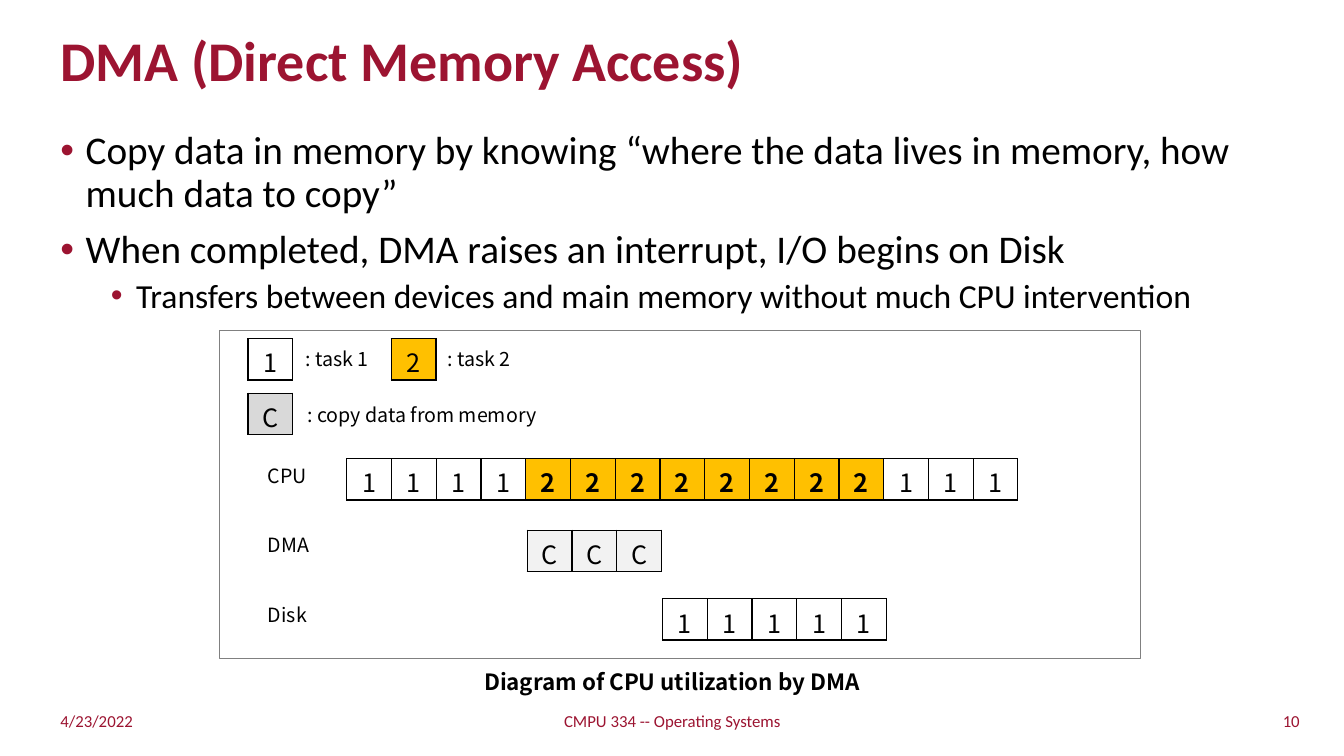
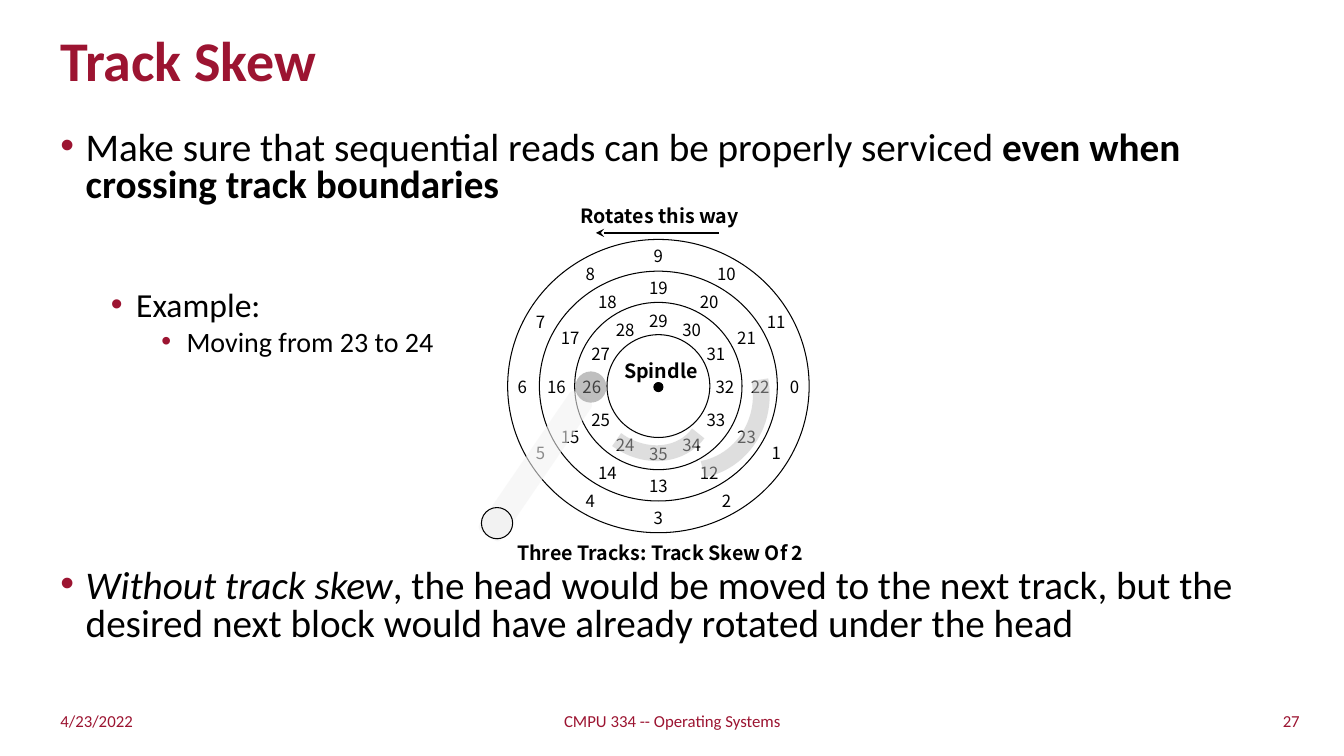
import math

import pptx
import pptx.dml.color
import pptx.enum.shapes
import pptx.enum.text
import pptx.oxml
import pptx.oxml.ns
import pptx.util

Inches = pptx.util.Inches
Pt = pptx.util.Pt
Align = pptx.enum.text.PP_ALIGN
Shape = pptx.enum.shapes.MSO_SHAPE
qn = pptx.oxml.ns.qn

COLOURS = {
    "maroon": "9C1431", "black": "000000", "amber": "FFC000",
    "frame": "808080", "arc": "BFBFBF", "pale": "F2F2F2", "silver": "D9D9D9",
}
TEXT_FONT = "Calibri"
DIAGRAM_FONT = "Noto Sans CJK KR"
CELL_WIDTH = 0.444
CELL_HEIGHT = 0.41


def colour(name):
    return pptx.dml.color.RGBColor.from_string(COLOURS[name])


def add_xml(parent, tag, **attributes):
    element = pptx.oxml.parse_xml(f'<a:{tag} {pptx.oxml.ns.nsdecls("a")}/>')
    for name, value in attributes.items():
        element.set(name, str(value))
    parent.append(element)
    return element


class Deck:
    def __init__(self):
        self.presentation = pptx.Presentation()
        self.presentation.slide_width = Inches(13.33)
        self.presentation.slide_height = Inches(7.5)
        self.slide = None

    def start_slide(self, title, number, bullets, line_spacing):
        layout = self.presentation.slide_layouts[1]
        self.slide = self.presentation.slides.add_slide(layout)
        self.title(title)
        self.body(bullets, line_spacing)
        self.footer("4/23/2022", 0.5, 3.76, Align.LEFT)
        self.footer("CMPU 334 -- Operating Systems", 4.42, 4.5, Align.CENTER)
        self.footer(str(number), 9.23, 3.76, Align.RIGHT)

    def place(self, shape, left, top, width, height):
        shape.left, shape.top = Inches(left), Inches(top)
        shape.width, shape.height = Inches(width), Inches(height)

    def style(self, run, size, font=DIAGRAM_FONT, tone="black", bold=False, italic=False):
        run.font.name = font
        run.font.size = Pt(size)
        run.font.bold = bold
        run.font.italic = italic
        run.font.color.rgb = colour(tone)

    def title(self, text):
        shape = self.slide.shapes.title
        self.place(shape, 0.5, 0.25, 11.45, 0.75)
        frame = shape.text_frame
        frame.text = text
        frame.auto_size = pptx.enum.text.MSO_AUTO_SIZE.NONE
        frame.vertical_anchor = pptx.enum.text.MSO_ANCHOR.MIDDLE
        paragraph = frame.paragraphs[0]
        paragraph.alignment = Align.LEFT
        paragraph.line_spacing = 0.9
        self.style(paragraph.runs[0], 40, TEXT_FONT, "maroon", bold=True)

    def body(self, bullets, line_spacing):
        shape = self.slide.placeholders[1]
        self.place(shape, 0.5, 1.25, 12.33, 5.45)
        frame = shape.text_frame
        frame.auto_size = pptx.enum.text.MSO_AUTO_SIZE.NONE
        for index, (level, space_before, pieces) in enumerate(bullets):
            paragraph = frame.add_paragraph() if index else frame.paragraphs[0]
            paragraph.level = level
            paragraph.line_spacing = line_spacing
            paragraph.space_before = Pt(space_before)
            self.bullet(paragraph, level)
            for text, emphasis in pieces:
                run = paragraph.add_run()
                run.text = text
                self.style(run, 28 - 4 * level, TEXT_FONT,
                           bold=emphasis == "bold", italic=emphasis == "italic")

    def bullet(self, paragraph, level):
        properties = paragraph._p.get_or_add_pPr()
        properties.set("marL", str(Inches(0.25 + 0.5 * level)))
        properties.set("indent", str(Inches(-0.25)))
        add_xml(add_xml(properties, "buClr"), "srgbClr", val=COLOURS["maroon"])
        add_xml(properties, "buFont", typeface="Arial")
        add_xml(properties, "buChar", char="•")

    def text(self, text, left, top, width, height=0.34, size=14, align=Align.LEFT,
             side_margin=0.1, **look):
        shape = self.slide.shapes.add_textbox(
            Inches(left), Inches(top), Inches(width), Inches(height))
        frame = shape.text_frame
        frame.text = text
        frame.word_wrap = True
        frame.margin_left = frame.margin_right = Inches(side_margin)
        paragraph = frame.paragraphs[0]
        paragraph.alignment = align
        self.style(paragraph.runs[0], size, **look)
        return frame

    def footer(self, text, left, width, align):
        frame = self.text(text, left, 6.95, width, 0.4, 12, align,
                          font=TEXT_FONT, tone="maroon")
        frame.vertical_anchor = pptx.enum.text.MSO_ANCHOR.MIDDLE

    def shape(self, kind, left, top, width, height, fill=None, line=None,
              weight=0.75, rotation=0, opacity=100):
        shape = self.slide.shapes.add_shape(
            kind, Inches(left), Inches(top), Inches(width), Inches(height))
        shape.shadow.inherit = False
        shape.rotation = rotation
        if fill:
            shape.fill.solid()
            shape.fill.fore_color.rgb = colour(fill)
        else:
            shape.fill.background()
        if line:
            shape.line.color.rgb = colour(line)
            shape.line.width = Pt(weight)
        else:
            shape.line.fill.background()
        if opacity < 100:
            for element in shape._element.spPr.iter(qn("a:srgbClr")):
                add_xml(element, "alpha", val=opacity * 1000)

    def circle(self, x, y, width, height, **look):
        self.shape(Shape.OVAL, x - width / 2, y - height / 2, width, height, **look)

    def arrow(self, start_x, end_x, y):
        connector = self.slide.shapes.add_connector(
            pptx.enum.shapes.MSO_CONNECTOR.STRAIGHT,
            Inches(start_x), Inches(y), Inches(end_x), Inches(y))
        connector.line.color.rgb = colour("black")
        connector.line.width = Pt(1.5)
        properties = connector._element.spPr
        add_xml(properties.find(qn("a:ln")), "tailEnd", type="stealth")
        add_xml(properties, "effectLst")

    def blocks(self, labels, left, top, fills=None, bottom_margin=0):
        fills = fills or {}
        table = self.slide.shapes.add_table(
            1, len(labels), Inches(left), Inches(top),
            Inches(CELL_WIDTH * len(labels)), Inches(CELL_HEIGHT)).table
        table.first_row = table.horz_banding = False
        table.rows[0].height = Inches(CELL_HEIGHT)
        for column, label in zip(table.columns, labels):
            column.width = Inches(CELL_WIDTH)
        for cell, label in zip(table.rows[0].cells, labels):
            cell.text = label
            cell.margin_bottom = Inches(bottom_margin)
            self.borders(cell)
            if label in fills:
                cell.fill.solid()
                cell.fill.fore_color.rgb = colour(fills[label])
            else:
                cell.fill.background()
            paragraph = cell.text_frame.paragraphs[0]
            paragraph.alignment = Align.CENTER
            self.style(paragraph.runs[0], 18, bold=label == "2" and len(labels) > 1)

    def borders(self, cell):
        properties = cell._tc.get_or_add_tcPr()
        for side in ("lnL", "lnR", "lnT", "lnB"):
            line = add_xml(properties, side, w=Pt(1))
            add_xml(add_xml(line, "solidFill"), "srgbClr", val=COLOURS["black"])


def build_dma_slide(deck):
    deck.start_slide("DMA (Direct Memory Access)", 10, [
        (0, 0, [("Copy data in memory by knowing “where the data lives in memory, "
                 "how much data to copy”", "")]),
        (0, 10, [("When completed, DMA raises an interrupt, I/O begins on Disk", "")]),
        (1, 5, [("Transfers between devices and main memory without much CPU "
                 "intervention", "")]),
    ], 0.9)
    deck.shape(Shape.RECTANGLE, 2.18, 3.28, 9.13, 3.25, line="frame")

    legend = [
        ("1", 2.46, 3.36, None, ": task 1", 2.93, 3.39, 1.0),
        ("2", 3.88, 3.36, "amber", ": task 2", 4.34, 3.39, 1.0),
        ("C", 2.46, 3.9, "silver", ": copy data from memory", 2.95, 3.95, 2.66),
    ]
    for label, left, top, fill, meaning, text_left, text_top, width in legend:
        deck.blocks(label, left, top, {label: fill} if fill else None)
        deck.text(meaning, text_left, text_top, width)

    for row, name in enumerate(("CPU", "DMA", "Disk")):
        deck.text(name, 2.56, 4.55 + 0.69 * row, 0.8)
    deck.blocks("1" * 4 + "2" * 8 + "1" * 3, 3.44, 4.55, {"2": "amber"}, 0.05)
    deck.blocks("CCC", 5.23, 5.26, {"C": "pale"})
    deck.blocks("11111", 6.57, 5.94)
    deck.text("Diagram of CPU utilization by DMA", 3.99, 6.58, 5.35, 0.37, 16,
              Align.CENTER, bold=True)


def build_track_skew_slide(deck):
    deck.start_slide("Track Skew", 27, [
        (0, 0, [("Make sure that sequential reads can be properly serviced ", ""),
                ("even when crossing track boundaries", "bold")]),
        (1, 61, [("Example:", "")]),
        (2, 5, [("Moving from 23 to 24", "")]),
        (0, 151, [("Without track skew", "italic"),
                  (", the head would be moved to the next track, but the desired "
                   "next block would have already rotated under the head", "")]),
    ], 0.8)
    deck.text("Three Tracks: Track Skew Of 2", 5.02, 5.32, 3.06,
              align=Align.CENTER, bold=True)

    centre_x, centre_y = 6.53, 3.83
    for width, height in ((1.02, 1.02), (1.66, 1.66), (2.36, 2.28), (2.99, 2.91)):
        deck.circle(centre_x, centre_y, width, height, line="black")

    sectors, skew = 12, 2
    tracks = [(0, 1.35, 1.3), (12, 1.01, 0.98), (24, 0.66, 0.66)]
    for track, (first, radius_x, radius_y) in enumerate(tracks):
        for step in range(sectors):
            angle = math.radians(360 / sectors * (step + skew * track))
            x = centre_x + radius_x * math.cos(angle)
            y = centre_y + radius_y * math.sin(angle)
            deck.text(str(first + step), x - 0.2, y - 0.14, 0.4, 0.3, 12,
                      Align.CENTER, side_margin=0)

    deck.circle(centre_x, 3.84, 0.09, 0.09, fill="black", line="black")
    deck.text("Spindle", 6.07, 3.51, 0.97, align=Align.CENTER, bold=True)
    deck.text("Rotates this way", 5.56, 1.97, 1.97, align=Align.CENTER, bold=True)
    deck.arrow(7.13, 5.91, 2.31)

    deck.shape(Shape.ROUNDED_RECTANGLE, 5.18, 3.79, 0.26, 1.67, fill="pale",
               rotation=34.4, opacity=58)
    deck.circle(5.86, 3.84, 0.31, 0.31, fill="frame", opacity=50)
    deck.circle(4.93, 5.19, 0.31, 0.31, fill="pale", line="black")
    deck.shape(Shape.ARC, 5.9, 3.32, 1.06, 1.23, line="arc", weight=11.25,
               rotation=126.4, opacity=50)
    deck.shape(Shape.ARC, 6.06, 3.18, 1.53, 1.45, line="arc", weight=12,
               rotation=79.1, opacity=50)


def main():
    deck = Deck()
    build_dma_slide(deck)
    build_track_skew_slide(deck)
    deck.presentation.save("out.pptx")


if __name__ == "__main__":
    main()
